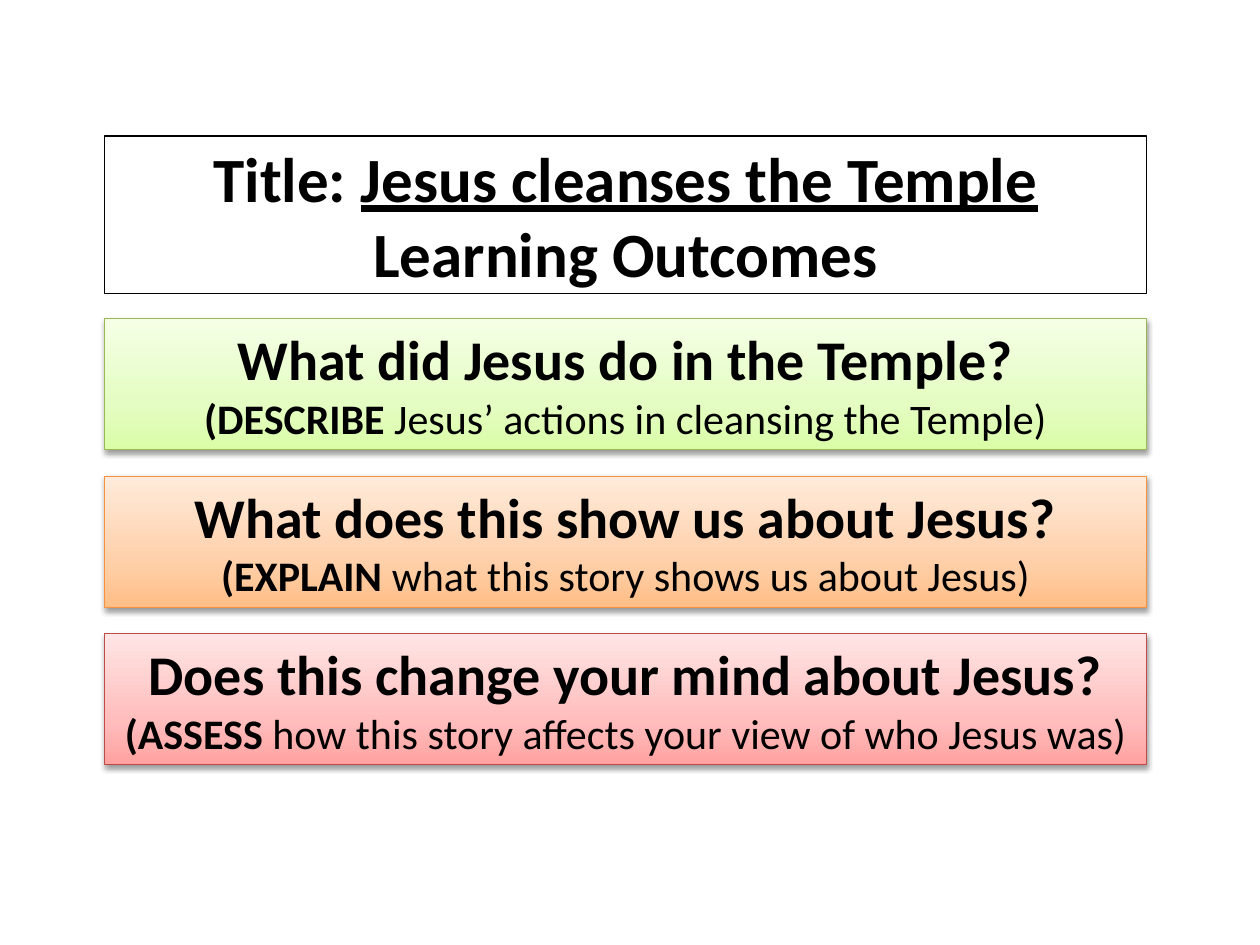
from copy import deepcopy

from lxml.etree import SubElement
from pptx import Presentation
from pptx.dml.color import RGBColor
from pptx.enum.shapes import MSO_SHAPE
from pptx.enum.text import MSO_ANCHOR, MSO_AUTO_SIZE, PP_ALIGN
from pptx.oxml.ns import qn
from pptx.util import Inches, Pt

BLACK = RGBColor(0, 0, 0)
WHITE = RGBColor(255, 255, 255)
GREEN = ("DAFDA7", "E4FDC2", "F5FFE6")
ORANGE = ("FFBE86", "FFD0AA", "FFEBDB")
RED = ("FFA2A1", "FFBEBD", "FFE5E5")
GREEN_LINE = RGBColor(0x98, 0xB9, 0x54)
ORANGE_LINE = RGBColor(0xF6, 0x92, 0x40)
RED_LINE = RGBColor(0xBE, 0x4B, 0x48)
STOP_POSITIONS = (0, 0.35, 1)

LABEL, TOPIC, SUBTITLE = "Title: ", "Jesus cleanses the Temple", "Learning Outcomes"
OUTCOMES = [
    ("What did Jesus do in the Temple?", "(DESCRIBE ",
     "Jesus’ actions in cleansing the Temple)", GREEN, GREEN_LINE),
    ("What does this show us about Jesus?", "(EXPLAIN ",
     "what this story shows us about Jesus)", ORANGE, ORANGE_LINE),
    ("Does this change your mind about Jesus?", "(ASSESS ",
     "how this story affects your view of who Jesus was)", RED, RED_LINE),
]

LEFT, WIDTH = Inches(0.83), Inches(8.27)
TITLE_TOP, TITLE_HEIGHT = Inches(1.08), Inches(1.25)
FIRST_TOP, BOX_HEIGHT, PITCH = Inches(2.53), Inches(1.04), Inches(1.25)


def add_text(paragraph, text, size, bold=True, underline=False):
    paragraph.alignment = PP_ALIGN.CENTER
    run = paragraph.add_run()
    run.text = text
    font = run.font
    font.name, font.size, font.color.rgb = "Calibri", Pt(size), BLACK
    font.bold, font.underline = bold, underline


def set_line(shape, color):
    shape.line.color.rgb = color
    shape.line.width = Pt(0.75)


def set_gradient(shape, colors):
    """Fill with three stops running from bottom to top."""
    fill = shape.fill
    fill.gradient()
    fill.gradient_angle = 90
    stop_list = shape._element.spPr.find(qn("a:gradFill")).find(qn("a:gsLst"))
    stop_list.append(deepcopy(stop_list[-1]))
    for stop, position, color in zip(fill.gradient_stops, STOP_POSITIONS, colors):
        stop.position = position
        stop.color.rgb = RGBColor.from_string(color)


def add_shadow(shape):
    shape.shadow.inherit = False
    effects = shape._element.spPr.find(qn("a:effectLst"))
    shadow = SubElement(effects, qn("a:outerShdw"), blurRad=str(Pt(3.1)),
                        dist=str(Pt(1.6)), dir="5400000", rotWithShape="0")
    color = SubElement(shadow, qn("a:srgbClr"), val=str(BLACK))
    SubElement(color, qn("a:alpha"), val="38000")


def add_title(slide):
    title = slide.shapes.title
    title.left, title.top, title.width, title.height = LEFT, TITLE_TOP, WIDTH, TITLE_HEIGHT
    title.fill.solid()
    title.fill.fore_color.rgb = WHITE
    color = title._element.spPr.find(qn("a:solidFill"))[0]
    SubElement(color, qn("a:alpha"), val="70000")
    set_line(title, BLACK)
    frame = title.text_frame
    frame.auto_size = MSO_AUTO_SIZE.NONE
    frame.vertical_anchor = MSO_ANCHOR.MIDDLE
    heading = frame.paragraphs[0]
    add_text(heading, LABEL, 36)
    add_text(heading, TOPIC, 36, underline=True)
    heading.add_line_break()
    add_text(heading, SUBTITLE, 36)


def add_outcome(slide, top, question, verb, task, colors, line_color):
    box = slide.shapes.add_shape(MSO_SHAPE.RECTANGLE, LEFT, top, WIDTH, BOX_HEIGHT)
    set_gradient(box, colors)
    set_line(box, line_color)
    add_shadow(box)
    frame = box.text_frame
    frame.word_wrap = True
    frame.auto_size = MSO_AUTO_SIZE.SHAPE_TO_FIT_TEXT
    frame.vertical_anchor = MSO_ANCHOR.TOP
    add_text(frame.paragraphs[0], question, 32)
    detail = frame.add_paragraph()
    add_text(detail, verb, 24)
    add_text(detail, task, 24, bold=False)


def main():
    deck = Presentation()
    deck.slide_width, deck.slide_height = Inches(10), Inches(7.5)
    slide = deck.slides.add_slide(deck.slide_layouts[5])
    add_title(slide)
    for index, outcome in enumerate(OUTCOMES):
        add_outcome(slide, FIRST_TOP + index * PITCH, *outcome)
    deck.save("out.pptx")


if __name__ == "__main__":
    main()
